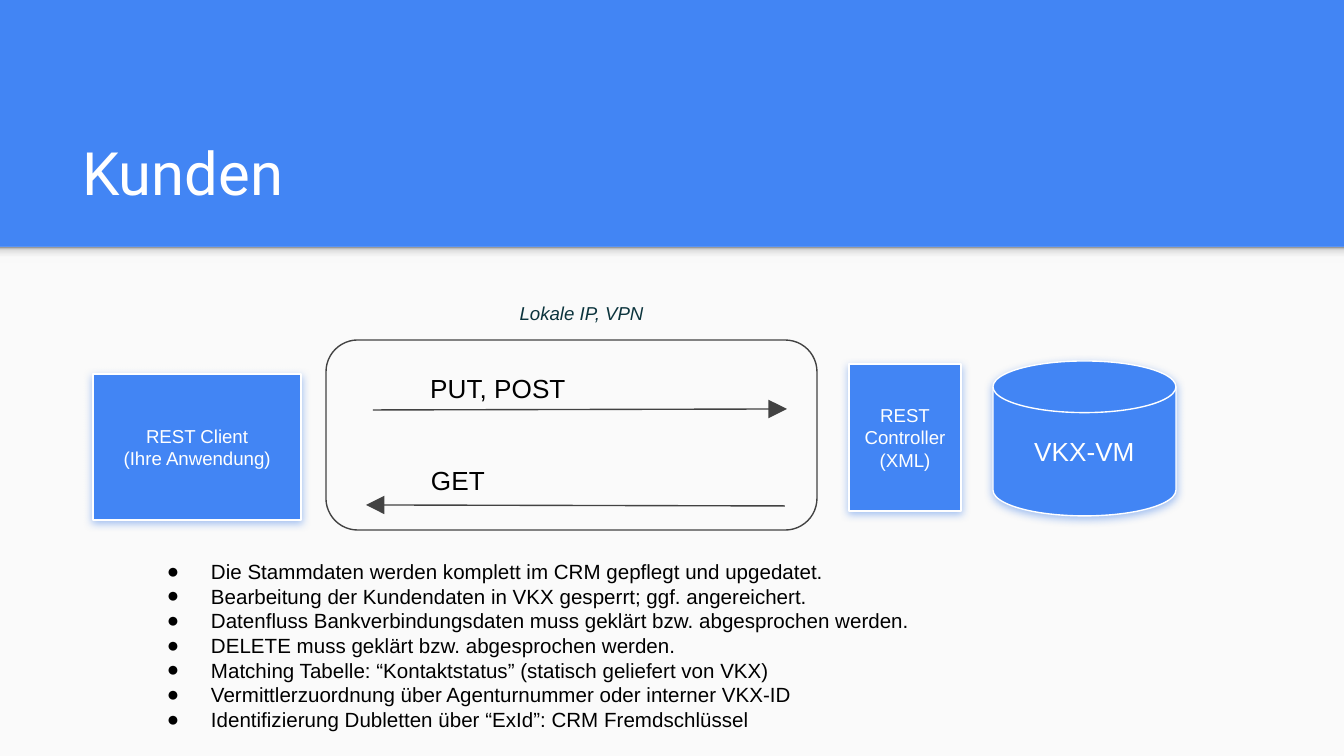
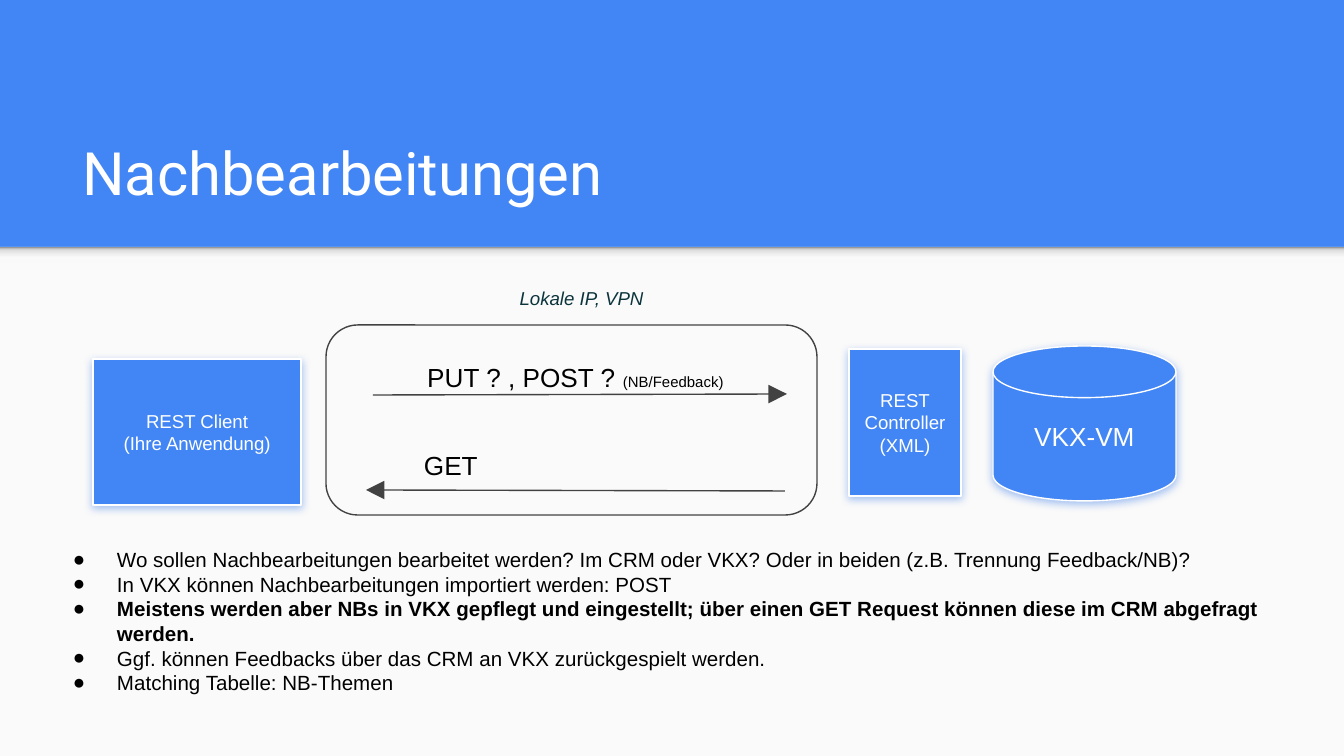
from lxml import etree
from pptx import Presentation
from pptx.dml.color import RGBColor
from pptx.enum.shapes import MSO_CONNECTOR, MSO_SHAPE
from pptx.enum.text import MSO_ANCHOR, MSO_AUTO_SIZE, PP_ALIGN
from pptx.oxml import parse_xml
from pptx.oxml.ns import qn
from pptx.util import Emu, Pt

LEFT, CENTER = PP_ALIGN.LEFT, PP_ALIGN.CENTER
TOP, MIDDLE, BOTTOM = MSO_ANCHOR.TOP, MSO_ANCHOR.MIDDLE, MSO_ANCHOR.BOTTOM
RECT, ROUNDED = MSO_SHAPE.RECTANGLE, MSO_SHAPE.ROUNDED_RECTANGLE
PROCESS, DISK = MSO_SHAPE.FLOWCHART_PROCESS, MSO_SHAPE.FLOWCHART_MAGNETIC_DISK
STRAIGHT = MSO_CONNECTOR.STRAIGHT

BLUE = RGBColor(0x42, 0x85, 0xF4)
GLOW = RGBColor(0x4A, 0x86, 0xE8)
PAPER = RGBColor(0xFA, 0xFA, 0xFA)
GRAY = RGBColor(0x42, 0x42, 0x42)
TEAL = RGBColor(0x0C, 0x34, 0x3D)
WHITE = RGBColor(0xFF, 0xFF, 0xFF)
BLACK = RGBColor(0, 0, 0)
BAND_STOPS = [(0, "F9F9F9"), (36, "F9F9F9"), (80, "DEDEDE"), (100, "999999")]
NS = 'xmlns:a="http://schemas.openxmlformats.org/drawingml/2006/main"'

W, H, HEADER = 1344, 756, 247
SCALE = 9144000 / W
INSET = 13
INDENT, HANGING = 68, 44

TITLE = {"name": "Roboto", "size": Pt(32), "color": WHITE}
VERB = {"name": "Arial", "size": Pt(14), "color": BLACK}
NOTE = {**VERB, "size": Pt(8)}
POINT = {**VERB, "size": Pt(11)}
STRONG = {**POINT, "bold": True}
BOX = {"name": "Arial", "size": Pt(10), "color": WHITE}
STORE = {**BOX, "size": Pt(14)}
CAPTION = {**BOX, "color": TEAL, "italic": True}

FRAME = (326, 0, 491, 190)
ARROWS = [((366, 165), (785, 166), "headEnd"), ((373, 70), (787, 69), "tailEnd")]
NODES = [
    (DISK, (993, 21, 183, 155), ["VKX-VM"], STORE),
    (PROCESS, (849, 24, 112, 147), ["REST", "Controller", "(XML)"], BOX),
    (PROCESS, (93, 34, 208, 146), ["REST Client", "(Ihre Anwendung)"], BOX),
]
CAPTION_AT = (463, -51, 237, 44)

SLIDES = [
    {
        "title": "Kunden",
        "top": 340,
        "send": ((401, 19, 194, 56), [("PUT, POST", VERB)]),
        "get": (418, 111, 329, 56),
        "points_at": (130, 546, 941, 165),
        "points": [
            ("Die Stammdaten werden komplett im CRM gepflegt und upgedatet.", POINT),
            ("Bearbeitung der Kundendaten in VKX gesperrt; ggf. angereichert.", POINT),
            ("Datenfluss Bankverbindungsdaten muss geklärt bzw. abgesprochen werden.", POINT),
            ("DELETE muss geklärt bzw. abgesprochen werden.", POINT),
            ("Matching Tabelle: “Kontaktstatus” (statisch geliefert von VKX)", POINT),
            ("Vermittlerzuordnung über Agenturnummer oder interner VKX-ID", POINT),
            ("Identifizierung Dubletten über “ExId”: CRM Fremdschlüssel", POINT),
        ],
    },
    {
        "title": "Nachbearbeitungen",
        "top": 325,
        "send": ((384, 23, 383, 56), [("PUT ? , POST ? ", VERB), ("(NB/Feedback)", NOTE)]),
        "get": (411, 111, 329, 56),
        "points_at": (36, 534, 1261, 222),
        "points": [
            ("Wo sollen Nachbearbeitungen bearbeitet werden? Im CRM oder VKX? "
             "Oder in beiden (z.B. Trennung Feedback/NB)?", POINT),
            ("In VKX können Nachbearbeitungen importiert werden: POST", POINT),
            ("Meistens werden aber NBs in VKX gepflegt und eingestellt; über einen "
             "GET Request können diese im CRM abgefragt werden.", STRONG),
            ("Ggf. können Feedbacks über das CRM an VKX zurückgespielt werden.", POINT),
            ("Matching Tabelle: NB-Themen", POINT),
        ],
    },
]


def px(n):
    return Emu(round(n * SCALE))


def place(at, dy=0):
    x, y, w, h = at
    return px(x), px(y + dy), px(w), px(h)


def add_bullet(p):
    pPr = p._p.get_or_add_pPr()
    pPr.set("marL", str(px(INDENT)))
    pPr.set("indent", str(-px(HANGING)))
    etree.SubElement(pPr, qn("a:buSzPts"), val="1100")
    etree.SubElement(pPr, qn("a:buFont"), typeface="Arial")
    etree.SubElement(pPr, qn("a:buChar"), char="●")


def write(sp, paragraphs, align=LEFT, anchor=TOP, bullet=False):
    tf = sp.text_frame
    frame_format = {"word_wrap": True, "auto_size": MSO_AUTO_SIZE.NONE, "vertical_anchor": anchor}
    for side in ("left", "right", "top", "bottom"):
        frame_format[f"margin_{side}"] = px(INSET)
    for key, value in frame_format.items():
        setattr(tf, key, value)
    for i, runs in enumerate(paragraphs):
        p = tf.paragraphs[0] if i == 0 else tf.add_paragraph()
        p.alignment = align
        if bullet:
            add_bullet(p)
        for text, style in runs:
            r = p.add_run()
            r.text = text
            for key, value in style.items():
                if key == "color":
                    r.font.color.rgb = value
                else:
                    setattr(r.font, key, value)


def add_box(s, kind, at, dy=0, fill=None, line=None):
    sp = s.shapes.add_shape(kind, *place(at, dy))
    sp.shadow.inherit = False
    if fill is None:
        sp.fill.background()
    else:
        sp.fill.solid()
        sp.fill.fore_color.rgb = fill
    if line is None:
        sp.line.fill.background()
    else:
        sp.line.color.rgb = line
        sp.line.width = Pt(0.75)
    return sp


def add_text(s, at, dy, paragraphs, **options):
    write(s.shapes.add_textbox(*place(at, dy)), paragraphs, **options)


def add_glow(sp):
    effects = sp._element.spPr.find(qn("a:effectLst"))
    effects.append(parse_xml(
        f'<a:outerShdw {NS} blurRad="{Pt(4.5)}" dist="{Pt(1.5)}" dir="5400000" '
        f'algn="bl" rotWithShape="0"><a:srgbClr val="{GLOW}">'
        '<a:alpha val="50000"/></a:srgbClr></a:outerShdw>'))


def add_arrow(s, start, end, tip, dy):
    (x1, y1), (x2, y2) = start, end
    line = s.shapes.add_connector(STRAIGHT, px(x1), px(y1 + dy), px(x2), px(y2 + dy))
    line.line.color.rgb = GRAY
    line.line.width = Pt(0.75)
    ln = line.line._get_or_add_ln()
    etree.SubElement(ln, qn(f"a:{tip}"), type="triangle", w="lg", len="lg")
    etree.SubElement(line._element.spPr, qn("a:effectLst"))


def add_backdrop(s):
    s.background.fill.solid()
    s.background.fill.fore_color.rgb = BLUE
    add_box(s, RECT, (0, HEADER, W, H - HEADER), fill=PAPER)
    band = add_box(s, RECT, (0, HEADER, W, 16), fill=PAPER)
    spPr = band._element.spPr
    stops = "".join(f'<a:gs pos="{pos * 1000}"><a:srgbClr val="{color}"/></a:gs>'
                    for pos, color in BAND_STOPS)
    spPr.replace(spPr.find(qn("a:solidFill")), parse_xml(
        f'<a:gradFill {NS}><a:gsLst>{stops}</a:gsLst>'
        '<a:lin ang="16200000" scaled="0"/></a:gradFill>'))


def add_title(s, text):
    sp = s.shapes.title
    sp.left, sp.top, sp.width, sp.height = place((69, 108, 1208, 113))
    write(sp, [[(text, TITLE)]], anchor=BOTTOM)


def add_diagram(s, content):
    top = content["top"]
    frame = add_box(s, ROUNDED, FRAME, top, line=GRAY)
    frame.adjustments[0] = 0.167
    for start, end, tip in ARROWS:
        add_arrow(s, start, end, tip, top)
    send_at, send_runs = content["send"]
    add_text(s, send_at, top, [send_runs], align=CENTER)
    add_text(s, content["get"], top, [[("GET", VERB)]])
    for kind, at, lines, style in NODES:
        sp = add_box(s, kind, at, top, fill=BLUE, line=WHITE)
        add_glow(sp)
        write(sp, [[(line, style)] for line in lines], align=CENTER, anchor=MIDDLE)
    add_text(s, CAPTION_AT, top, [[("Lokale IP, VPN", CAPTION)]], align=CENTER)


def main():
    prs = Presentation()
    prs.slide_width, prs.slide_height = px(W), px(H)
    for content in SLIDES:
        s = prs.slides.add_slide(prs.slide_layouts[5])
        add_backdrop(s)
        add_title(s, content["title"])
        add_diagram(s, content)
        add_text(s, content["points_at"], 0, [[point] for point in content["points"]], bullet=True)
    prs.save("out.pptx")


if __name__ == "__main__":
    main()
